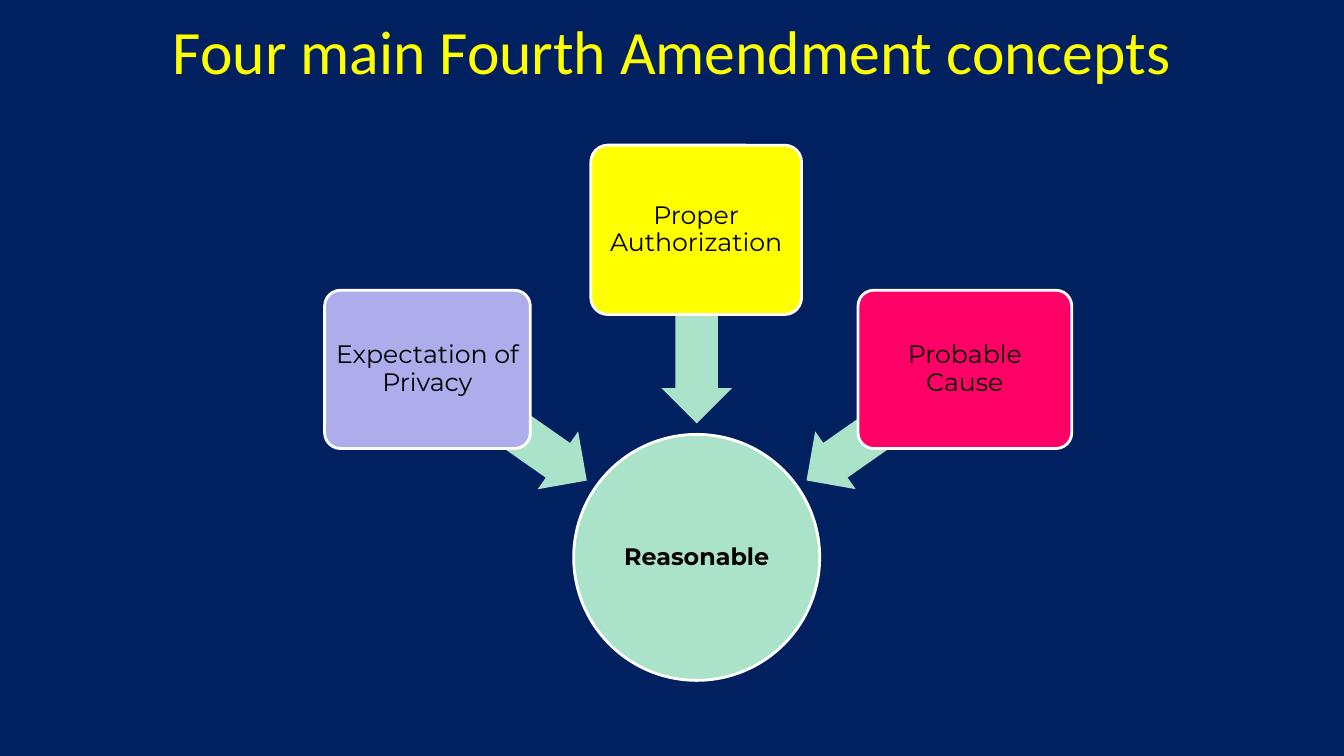
from math import cos, radians, sin

from pptx import Presentation
from pptx import util as u
from pptx.dml.color import RGBColor
from pptx.enum import shapes, text

PX = 9144  # 100 px to the inch
COLORS = {
    "navy": "002060", "yellow": "FFFF00", "white": "FFFFFF", "black": "000000",
    "mint": "AAE2CA", "arrow": "ABE2CA", "lavender": "ADADEB", "pink": "FF0066",
}


def color(name):
    return RGBColor.from_string(COLORS[name])


def px(*lengths):
    return [u.Emu(round(length * PX)) for length in lengths]


def write(shape, words, size, font="Montserrat", ink="black", bold=False,
          inset=4, spacing=0.9):
    frame = shape.text_frame
    frame.word_wrap = True
    frame.vertical_anchor = text.MSO_ANCHOR.MIDDLE
    frame.margin_left, frame.margin_top, frame.margin_right, frame.margin_bottom = px(*[inset] * 4)
    paragraph = frame.paragraphs[0]
    paragraph.alignment = text.PP_ALIGN.CENTER
    paragraph.line_spacing = spacing
    run = paragraph.add_run()
    run.text = words
    run.font.name = font
    run.font.size = u.Pt(size)
    run.font.bold = bold
    run.font.color.rgb = color(ink)


def add_block(slide, kind, box, fill, outline=None):
    shape = slide.shapes.add_shape(kind, *px(*box))
    shape.shadow.inherit = False
    shape.fill.solid()
    shape.fill.fore_color.rgb = color(fill)
    if outline:
        shape.line.color.rgb = color(outline)
        shape.line.width = u.Pt(2)
    else:
        shape.line.fill.background()
    return shape


def add_title(slide, box):
    title = slide.shapes.add_textbox(*px(*box))
    write(title, "Four main Fourth Amendment concepts", 44,
          font="Calibri", ink="yellow", inset=5, spacing=1.0)


def add_concept(slide, box, words, fill):
    card = add_block(slide, shapes.MSO_SHAPE.ROUNDED_RECTANGLE, box, fill, "white")
    card.adjustments[0] = 0.1
    write(card, words, 18)


def add_arrow(slide, hub_x, hub_y, angle):
    """Place an arrow on a ring round the hub, pointing inwards."""
    width, height, ring = 192, 70, 229
    x = hub_x + ring * cos(radians(angle)) - width / 2
    y = hub_y + ring * sin(radians(angle)) - height / 2
    arrow = add_block(slide, shapes.MSO_SHAPE.LEFT_ARROW, (x, y, width, height), "arrow")
    arrow.adjustments[0], arrow.adjustments[1] = 0.6, 0.5
    arrow.rotation = angle


def add_diagram(slide, box):
    left, top, width, height = box

    # Hub circle, at the bottom of the diagram
    diameter = 244
    hub_x, hub_y = left + 369, top + height - diameter / 2
    hub = add_block(slide, shapes.MSO_SHAPE.OVAL,
                    (hub_x - diameter / 2, hub_y - diameter / 2, diameter, diameter),
                    "mint", "white")
    write(hub, "Reasonable", 17, bold=True, inset=1)

    # Concepts with their arrows: angle, words, fill, box within the diagram
    concepts = [
        (215, "Expectation of Privacy", "lavender", (0, 144, 204, 157)),
        (270, "Proper Authorization", "yellow", (264, 0, 209, 168)),
        (325, "Probable Cause", "pink", (width - 212, 144, 212, 157)),
    ]
    for angle, words, fill, (x, y, card_width, card_height) in concepts:
        add_arrow(slide, hub_x, hub_y, angle)
        add_concept(slide, (left + x, top + y, card_width, card_height), words, fill)


def main():
    presentation = Presentation()
    presentation.slide_width, presentation.slide_height = px(1333, 750)
    slide = presentation.slides.add_slide(presentation.slide_layouts[6])
    slide.background.fill.solid()
    slide.background.fill.fore_color.rgb = color("navy")
    add_title(slide, (67, 8, 1200, 83))
    add_diagram(slide, (322, 144, 741, 531))
    presentation.save("out.pptx")


if __name__ == "__main__":
    main()
